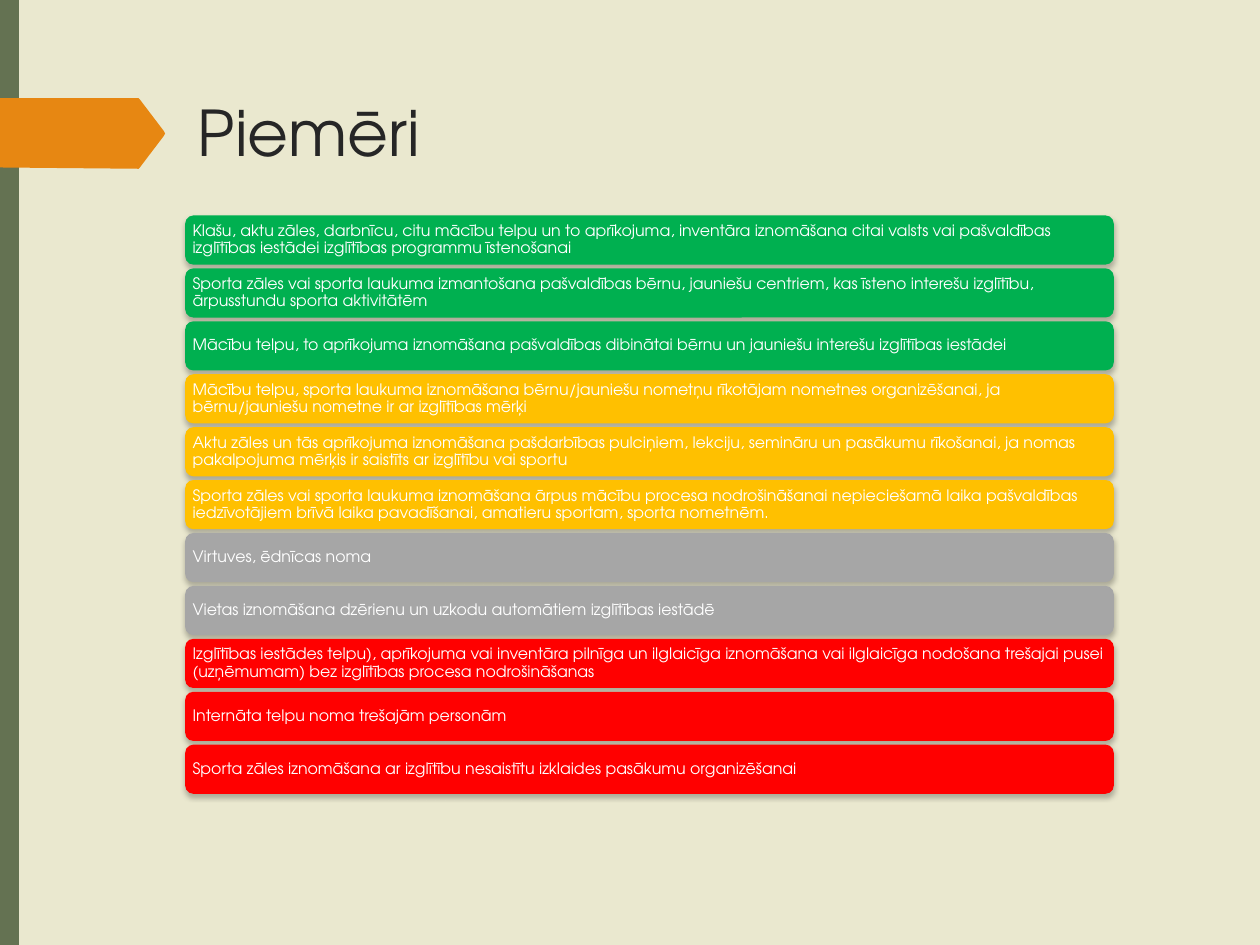
from lxml import etree
from pptx import Presentation, util as u
from pptx.dml.color import RGBColor
from pptx.enum import shapes, text
from pptx.oxml import ns

FONT = "TeX Gyre Adventor"
GREEN, AMBER, GREY, RED = "00B050", "FFC000", "A6A6A6", "FF0000"


def paint(target, color):
    """Give a shape a solid fill with no outline or inherited shadow."""
    target.fill.solid()
    target.fill.fore_color.rgb = RGBColor.from_string(color)
    target.line.fill.background()
    target.shadow.inherit = False


def write(tf, words, size, color):
    """Write one left-aligned run into a text frame."""
    tf.word_wrap = True
    p = tf.paragraphs[0]
    p.alignment = text.PP_ALIGN.LEFT
    r = p.add_run()
    r.text = words
    r.font.name, r.font.size = FONT, u.Pt(size)
    r.font.color.rgb = RGBColor.from_string(color)
    return p


prs = Presentation()
prs.slide_width, prs.slide_height = u.Inches(10), u.Inches(7.5)
s = prs.slides.add_slide(prs.slide_layouts[5])

# Background
s.background.fill.solid()
s.background.fill.fore_color.rgb = RGBColor.from_string("EAE8CF")

# Title
left = u.Inches(1.47)
title = s.shapes.title
title.left, title.top = left, u.Inches(0.69)
title.width, title.height = u.Inches(7.97), u.Inches(1.4)
title.text_frame.vertical_anchor = text.MSO_ANCHOR.TOP
write(title.text_frame, "Piemēri", 36, "262626")

# Side band and arrow tab, the tab outlined in hundredths of an inch
band = s.shapes.add_shape(shapes.MSO_SHAPE.RECTANGLE, 0, 0, u.Inches(0.15), prs.slide_height)
paint(band, "647252")
outline = [(110, 78), (111, 79), (130, 104), (131, 106),
           (130, 108), (111, 133), (110, 134), (0, 133)]
builder = s.shapes.build_freeform(0, 78, scale=u.Inches(0.01))
builder.add_line_segments(outline, close=True)
paint(builder.convert_to_shape(), "E78712")

# Examples, coloured by category
examples = [
    (GREEN, "Klašu, aktu zāles, darbnīcu, citu mācību telpu un to aprīkojuma, inventāra iznomāšana "
            "citai valsts vai pašvaldības izglītības iestādei izglītības programmu īstenošanai"),
    (GREEN, "Sporta zāles vai sporta laukuma izmantošana pašvaldības bērnu, jauniešu centriem, "
            "kas īsteno interešu izglītību, ārpusstundu sporta aktivitātēm"),
    (GREEN, "Mācību telpu, to aprīkojuma iznomāšana pašvaldības dibinātai bērnu un jauniešu "
            "interešu izglītības iestādei"),
    (AMBER, "Mācību telpu, sporta laukuma iznomāšana bērnu/jauniešu nometņu rīkotājam nometnes "
            "organizēšanai, ja bērnu/jauniešu nometne ir ar izglītības mērķi"),
    (AMBER, "Aktu zāles un tās aprīkojuma iznomāšana pašdarbības pulciņiem, lekciju, semināru un "
            "pasākumu rīkošanai, ja nomas pakalpojuma mērķis ir saistīts ar izglītību vai sportu"),
    (AMBER, "Sporta zāles vai sporta laukuma iznomāšana ārpus mācību procesa nodrošināšanai "
            "nepieciešamā laika pašvaldības iedzīvotājiem brīvā laika pavadīšanai, "
            "amatieru sportam, sporta nometnēm."),
    (GREY, "Virtuves, ēdnīcas noma"),
    (GREY, "Vietas iznomāšana dzērienu un uzkodu automātiem izglītības iestādē"),
    (RED, "Izglītības iestādes telpu), aprīkojuma vai inventāra pilnīga un ilglaicīga iznomāšana "
          "vai ilglaicīga nodošana trešajai pusei (uzņēmumam) bez izglītības procesa nodrošināšanas"),
    (RED, "Internāta telpu noma trešajām personām"),
    (RED, "Sporta zāles iznomāšana ar izglītību nesaistītu izklaides pasākumu organizēšanai"),
]
top, pitch = u.Inches(1.71), u.Inches(0.42)
for row, (color, words) in enumerate(examples):
    bar = s.shapes.add_shape(shapes.MSO_SHAPE.ROUNDED_RECTANGLE, left, top + row * pitch,
                             u.Inches(7.37), u.Inches(0.39))
    paint(bar, color)
    tf = bar.text_frame
    tf.margin_left = tf.margin_right = u.Inches(0.04)
    tf.margin_top = tf.margin_bottom = u.Inches(0.04)
    tf.vertical_anchor = text.MSO_ANCHOR.MIDDLE
    write(tf, words, 9, "FFFFFF").line_spacing = 0.9

    # Soft shadow straight below the bar
    effects = bar._element.spPr.find(ns.qn("a:effectLst"))
    shadow = etree.SubElement(effects, ns.qn("a:outerShdw"), blurRad=str(u.Pt(3)),
                              dist=str(u.Pt(2)), dir="5400000", rotWithShape="0")
    black = etree.SubElement(shadow, ns.qn("a:srgbClr"), val="000000")
    etree.SubElement(black, ns.qn("a:alpha"), val="25000")

prs.save("out.pptx")
